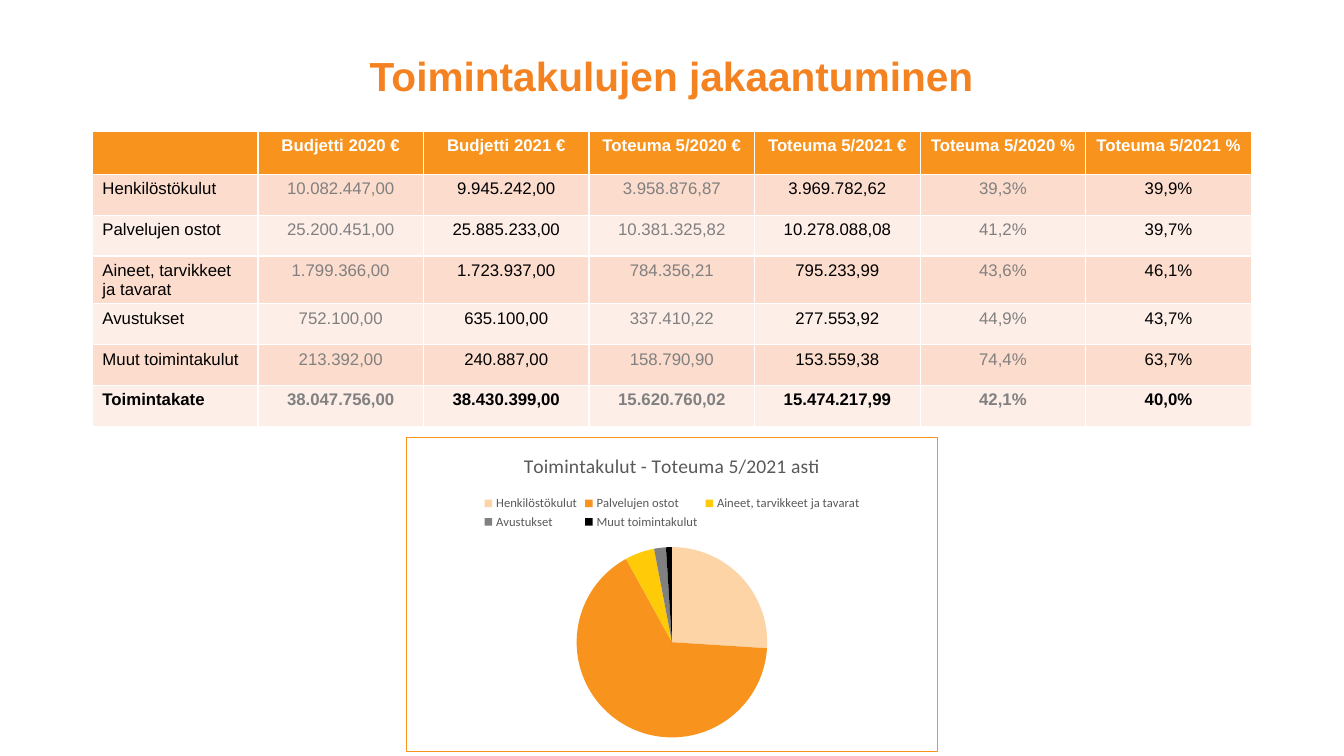
from pptx import Presentation, util as u
from pptx.chart.data import CategoryChartData
from pptx.dml.color import RGBColor
from pptx.enum import chart as ch, text
from pptx.oxml import parse_xml
from pptx.oxml.ns import nsdecls

COLORS = {
    "title": "F58220", "orange": "F8931D", "white": "FFFFFF", "black": "000000",
    "grey": "808080", "band": "FCDCCD", "light": "FEEEE8", "label": "595959",
    "peach": "FCD4A5", "yellow": "FFCA08",
}
ROWS = [
    ["", "Budjetti 2020 €", "Budjetti 2021 €", "Toteuma 5/2020 €",
     "Toteuma 5/2021 €", "Toteuma 5/2020 %", "Toteuma 5/2021 %"],
    ["Henkilöstökulut", "10.082.447,00", "9.945.242,00", "3.958.876,87",
     "3.969.782,62", "39,3%", "39,9%"],
    ["Palvelujen ostot", "25.200.451,00", "25.885.233,00", "10.381.325,82",
     "10.278.088,08", "41,2%", "39,7%"],
    ["Aineet, tarvikkeet ja tavarat", "1.799.366,00", "1.723.937,00", "784.356,21",
     "795.233,99", "43,6%", "46,1%"],
    ["Avustukset", "752.100,00", "635.100,00", "337.410,22",
     "277.553,92", "44,9%", "43,7%"],
    ["Muut toimintakulut", "213.392,00", "240.887,00", "158.790,90",
     "153.559,38", "74,4%", "63,7%"],
    ["Toimintakate", "38.047.756,00", "38.430.399,00", "15.620.760,02",
     "15.474.217,99", "42,1%", "40,0%"],
]
SHARES = [26, 66, 5, 2, 1]
SLICES = ["peach", "orange", "yellow", "grey", "black"]


class Deck:
    """Holds the style, the scale and the current slide."""

    px = 9525
    align = text.PP_ALIGN

    def __init__(self, width, height):
        self.prs = Presentation()
        self.prs.slide_width, self.prs.slide_height = self.box(width, height)
        self.s = self.prs.slides.add_slide(self.prs.slide_layouts[5])

    def box(self, *lengths):
        return [u.Emu(n * self.px) for n in lengths]

    def rgb(self, name):
        return RGBColor.from_string(COLORS[name])

    def font(self, font, color, size, name="Arial", bold=False):
        for key, value in {"name": name, "size": u.Pt(size), "bold": bold}.items():
            setattr(font, key, value)
        font.color.rgb = self.rgb(color)

    def title(self, words, x, y, w, h, bottom):
        sp = self.s.shapes.title
        sp.left, sp.top, sp.width, sp.height = self.box(x, y, w, h)
        tf = sp.text_frame
        tf.text = words
        tf.vertical_anchor = text.MSO_ANCHOR.MIDDLE
        tf.margin_bottom = u.Emu(bottom * self.px)
        p = tf.paragraphs[0]
        p.alignment, p.line_spacing = self.align.CENTER, 0.9
        self.font(p.runs[0].font, "title", 29, bold=True)

    def table(self, rows, x, y, w, header, height):
        last, cols = len(rows) - 1, len(rows[0])
        total = header + height * last
        table = self.s.shapes.add_table(len(rows), cols, *self.box(x, y, w, total)).table
        for i, values in enumerate(rows):
            table.rows[i].height = u.Emu((height if i else header) * self.px)
            for j, value in enumerate(values):
                cell = table.cell(i, j)
                cell.fill.solid()
                fill = ("band" if i % 2 else "light") if i else "orange"
                cell.fill.fore_color.rgb = self.rgb(fill)
                if not value:
                    continue
                cell.text = value
                p = cell.text_frame.paragraphs[0]
                p.alignment = self.align.CENTER if j or not i else self.align.LEFT
                color = ("grey" if j % 2 else "black") if i else "white"
                self.font(p.runs[0].font, color, 12, bold=i in (0, last))

    def pie(self, heading, cats, values, colors, x, y, w, h):
        data = CategoryChartData()
        data.categories = cats
        data.add_series("Series 1", values)
        chart = self.s.shapes.add_chart(
            ch.XL_CHART_TYPE.PIE, *self.box(x, y, w, h), data).chart
        self.font(chart.font, "black", 10, "Calibri")
        chart.has_title = True
        tf = chart.chart_title.text_frame
        tf.text = heading
        self.font(tf.paragraphs[0].runs[0].font, "label", 14, "Calibri")
        chart.chart_title.include_in_layout = False
        chart.has_legend = True
        chart.legend.position = ch.XL_LEGEND_POSITION.TOP
        chart.legend.include_in_layout = False
        self.font(chart.legend.font, "label", 9, "Calibri")
        plot = chart.plots[0]
        plot.vary_by_categories = True
        for i, color in enumerate(colors):
            fmt = plot.series[0].points[i].format
            fmt.fill.solid()
            fmt.fill.fore_color.rgb = self.rgb(color)
            fmt.line.fill.background()
        frame = parse_xml(
            f'<c:spPr {nsdecls("c", "a")}><a:noFill/><a:ln w="{u.Pt(0.75)}"><a:solidFill>'
            f'<a:srgbClr val="{COLORS["orange"]}"/></a:solidFill></a:ln></c:spPr>')
        chart.element.find(".//{*}chart").addnext(frame)


def main():
    deck = Deck(1280, 720)
    deck.title("Toimintakulujen jakaantuminen", 88, 38, 1104, 139, 71)
    deck.table(ROWS, 88, 125, 1104, 41, 39)
    deck.pie("Toimintakulut - Toteuma 5/2021 asti", [row[0] for row in ROWS[1:-1]],
             SHARES, SLICES, 387, 416, 506, 300)
    deck.prs.save("out.pptx")


if __name__ == "__main__":
    main()
